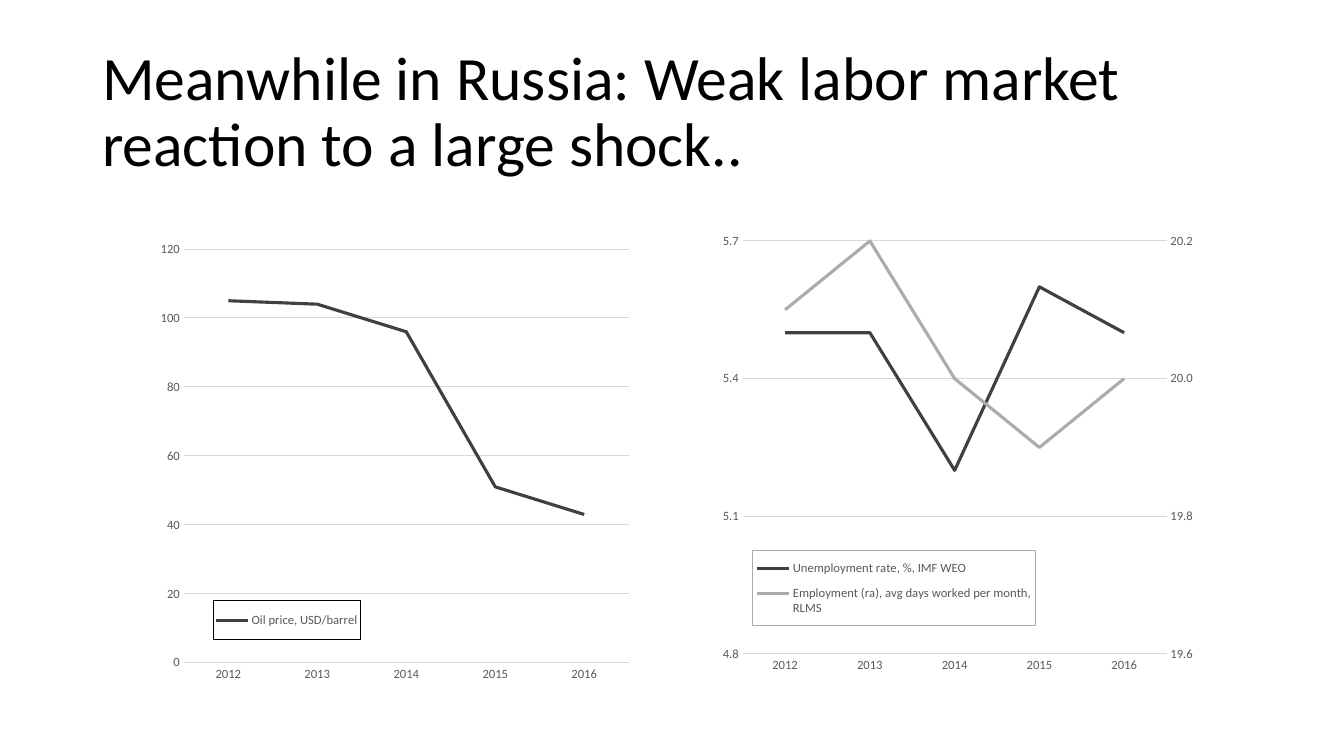
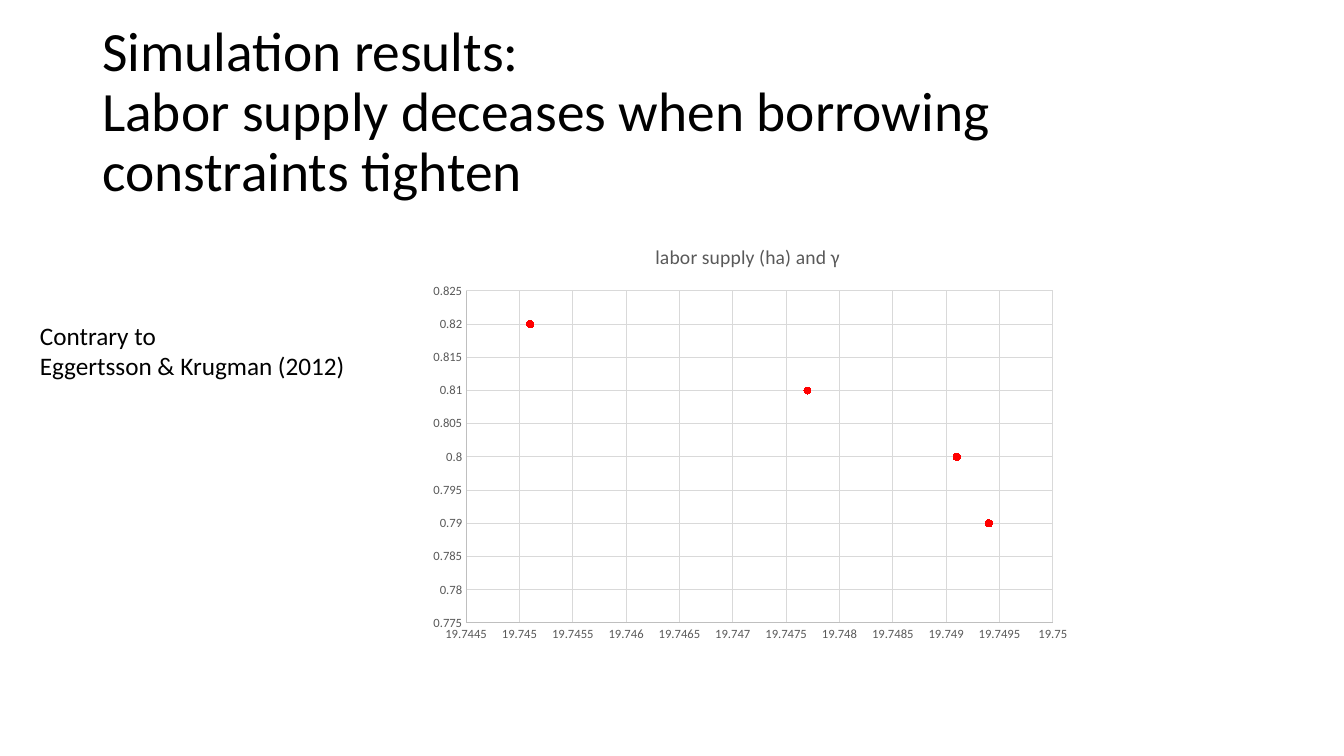
from copy import deepcopy

from pptx import Presentation
from pptx.chart.axis import CategoryAxis, ValueAxis
from pptx.chart.data import CategoryChartData, XyChartData
from pptx.dml.color import RGBColor
from pptx.enum.chart import XL_CHART_TYPE, XL_LEGEND_POSITION, XL_MARKER_STYLE, XL_TICK_MARK
from pptx.enum.text import MSO_ANCHOR, MSO_AUTO_SIZE, PP_ALIGN
from pptx.oxml import parse_xml
from pptx.oxml.ns import nsdecls, qn
from pptx.util import Emu, Pt

LINE_CHART = XL_CHART_TYPE.LINE
SCATTER_CHART = XL_CHART_TYPE.XY_SCATTER
LEGEND_BOTTOM = XL_LEGEND_POSITION.BOTTOM
CIRCLE = XL_MARKER_STYLE.CIRCLE
NO_TICK = XL_TICK_MARK.NONE
MIDDLE = MSO_ANCHOR.MIDDLE
FIXED_SIZE = MSO_AUTO_SIZE.NONE
GROW = MSO_AUTO_SIZE.SHAPE_TO_FIT_TEXT
LEFT = PP_ALIGN.LEFT

EMU_PER_PX = 914400 / 100.8
TITLE_ONLY = 5
YEARS = ["2012", "2013", "2014", "2015", "2016"]


def px(length):
    """Turn pixels into EMU."""
    return Emu(round(length * EMU_PER_PX))


def rgb(hex_colour):
    """Turn a hex string into a colour."""
    return RGBColor.from_string(hex_colour)


class Deck:
    """Hold the shared style and the current slide."""

    FONT = "Calibri"
    INK, LABEL, GRID, AXIS = "000000", "595959", "D9D9D9", "BFBFBF"
    DARK, PALE, DOT = "404040", "AFABAB", "FF0000"

    def __init__(self):
        """Start an empty wide presentation."""
        self.presentation = Presentation()
        self.presentation.slide_width = px(1344)
        self.presentation.slide_height = px(756)
        self.slide = None

    def style_font(self, font, size, colour):
        """Apply the deck typeface with a size and colour."""
        font.name, font.size, font.bold = self.FONT, Pt(size), False
        font.color.rgb = rgb(colour)

    def style_line(self, line, colour, width=0.75):
        """Colour a line, or hide it when no colour is given."""
        if colour is None:
            line.fill.background()
        else:
            line.color.rgb = rgb(colour)
            line.width = Pt(width)

    def add_slide(self, heading, size=44):
        """Add a slide with its title."""
        layout = self.presentation.slide_layouts[TITLE_ONLY]
        self.slide = self.presentation.slides.add_slide(layout)
        title = self.slide.shapes.title
        title.left, title.top, title.width, title.height = map(px, (92, 40, 1159, 147))
        frame = title.text_frame
        frame.text = heading
        frame.auto_size, frame.vertical_anchor = FIXED_SIZE, MIDDLE
        paragraph = frame.paragraphs[0]
        paragraph.alignment, paragraph.line_spacing = LEFT, 0.9
        self.style_font(paragraph.font, size, self.INK)

    def add_note(self, box, lines, size=18):
        """Add an unwrapped text box with one paragraph per line."""
        frame = self.slide.shapes.add_textbox(*map(px, box)).text_frame
        frame.word_wrap, frame.auto_size = False, GROW
        frame.text = "\n".join(lines)
        for paragraph in frame.paragraphs:
            self.style_font(paragraph.font, size, self.INK)

    def manual_layout(self, frame, area, inner=False):
        """Return chart layout XML for an area given in slide pixels."""
        left, top, width, height = frame
        shares = ((area[0] - left) / width, (area[1] - top) / height,
                  area[2] / width, area[3] / height)
        target = '<c:layoutTarget val="inner"/>' if inner else ""
        modes = "".join(f'<c:{side}Mode val="edge"/>' for side in "xy")
        values = "".join(f'<c:{key} val="{share:.3f}"/>' for key, share in zip("xywh", shares))
        return parse_xml(f'<c:layout {nsdecls("c")}><c:manualLayout>'
                         f'{target}{modes}{values}</c:manualLayout></c:layout>')

    def add_chart(self, kind, frame, plot, data):
        """Add a chart with a fixed plot area and the deck font."""
        chart = self.slide.shapes.add_chart(kind, *map(px, frame), data).chart
        self.style_font(chart.font, 10, self.INK)
        chart.has_title = chart.has_legend = False
        chart.plots[0].vary_by_categories = False
        plot_area = chart._chartSpace.chart.plotArea
        for layout in plot_area.findall(qn("c:layout")):
            plot_area.remove(layout)
        plot_area.insert(0, self.manual_layout(frame, plot, inner=True))
        return chart

    def style_axis(self, axis, line=None, grid=None, scale=None, number_format="General"):
        """Format an axis; scale is minimum, maximum and step."""
        axis.major_tick_mark = axis.minor_tick_mark = NO_TICK
        self.style_line(axis.format.line, line)
        axis.has_major_gridlines = grid is not None
        if grid:
            self.style_line(axis.major_gridlines.format.line, grid)
        if scale:
            axis.minimum_scale, axis.maximum_scale, axis.major_unit = scale
        labels = axis.tick_labels
        labels.number_format, labels.number_format_is_linked = number_format, False
        self.style_font(labels.font, 9, self.LABEL)

    def add_legend(self, chart, frame, box, outline):
        """Add an outlined legend over the plot."""
        chart.has_legend = True
        legend = chart.legend
        legend.position, legend.include_in_layout = LEGEND_BOTTOM, False
        overlay = legend._element.find(qn("c:overlay"))
        overlay.addprevious(self.manual_layout(frame, box))
        overlay.addnext(parse_xml(
            f'<c:spPr {nsdecls("c", "a")}><a:noFill/><a:ln w="9525"><a:solidFill>'
            f'<a:srgbClr val="{outline}"/></a:solidFill></a:ln></c:spPr>'))
        self.style_font(legend.font, 9, self.LABEL)

    def add_line_chart(self, frame, plot, series, scale, number_format, legend, outline):
        """Add a yearly line chart from name, values and colour triples."""
        data = CategoryChartData()
        data.categories = YEARS
        for name, values, _ in series:
            data.add_series(name, values)
        chart = self.add_chart(LINE_CHART, frame, plot, data)
        for line, (_, _, colour) in zip(chart.plots[0].series, series):
            line.smooth = False
            self.style_line(line.format.line, colour, 2.25)
        self.style_axis(chart.category_axis, line=self.GRID)
        self.style_axis(chart.value_axis, grid=self.GRID, scale=scale,
                        number_format=number_format)
        self.add_legend(chart, frame, legend, outline)
        return chart

    def move_last_series_right(self, chart, scale, number_format):
        """Plot the last series against a second axis on the right."""
        plot_area = chart._chartSpace.chart.plotArea
        left_plot = plot_area.find(qn("c:lineChart"))
        right_plot = deepcopy(left_plot)
        left_plot.remove(left_plot.findall(qn("c:ser"))[-1])
        for series in right_plot.findall(qn("c:ser"))[:-1]:
            right_plot.remove(series)
        left_plot.addnext(right_plot)

        years = deepcopy(plot_area.find(qn("c:catAx")))
        values = deepcopy(plot_area.find(qn("c:valAx")))
        plot_area.find(qn("c:valAx")).addnext(values)
        values.addnext(years)
        ids = ("50010", "50020")
        for axis, own, other in ((years, *ids), (values, *reversed(ids))):
            axis.find(qn("c:axId")).set("val", own)
            axis.find(qn("c:crossAx")).set("val", other)
        for reference, own in zip(right_plot.findall(qn("c:axId")), ids):
            reference.set("val", own)
        values.find(qn("c:axPos")).set("val", "r")
        values.find(qn("c:crosses")).set("val", "max")
        CategoryAxis(years).visible = False
        self.style_axis(ValueAxis(values), scale=scale, number_format=number_format)

    def add_scatter_chart(self, frame, plot, heading, points, x_scale, y_scale):
        """Add a titled scatter chart of dots."""
        data = XyChartData()
        dots = data.add_series("Series 1")
        for x, y in points:
            dots.add_data_point(x, y)
        chart = self.add_chart(SCATTER_CHART, frame, plot, data)
        for axis, scale in ((chart.category_axis, x_scale), (chart.value_axis, y_scale)):
            self.style_axis(axis, line=self.AXIS, grid=self.GRID, scale=scale)
        chart.has_title = True
        chart.chart_title.include_in_layout = False
        caption = chart.chart_title.text_frame
        caption.text = heading
        self.style_font(caption.paragraphs[0].font, 14, self.LABEL)
        series = chart.plots[0].series[0]
        self.style_line(series.format.line, None)
        marker = series.marker
        marker.style, marker.size = CIRCLE, 5
        marker.format.fill.solid()
        marker.format.fill.fore_color.rgb = rgb(self.DOT)
        self.style_line(marker.format.line, self.DOT)


def main():
    """Build both slides and save them."""
    deck = Deck()

    deck.add_slide("Meanwhile in Russia: Weak labor market reaction to a large shock..")
    labor = deck.add_line_chart(
        frame=(706, 216, 504, 500), plot=(743, 241, 424, 413),
        series=[
            ("Unemployment rate, %, IMF WEO", (5.5, 5.5, 5.2, 5.6, 5.5), deck.DARK),
            ("Employment (ra), avg days worked per month, RLMS",
             (20.1, 20.2, 20, 19.9, 20), deck.PALE),
        ],
        scale=(4.8, 5.7, 0.3), number_format="0.0",
        legend=(753, 551, 282, 75), outline=deck.PALE)
    deck.move_last_series_right(labor, scale=(19.6, 20.2, 0.2), number_format="0.0")
    deck.add_line_chart(
        frame=(142, 224, 504, 492), plot=(184, 249, 445, 414),
        series=[("Oil price, USD/barrel", (105, 104, 96, 51, 43), deck.DARK)],
        scale=(0, 120, 20), number_format="General",
        legend=(213, 601, 147, 39), outline=deck.INK)

    deck.add_slide("Simulation results:\vLabor supply deceases when borrowing "
                   "constraints tighten", size=39.6)
    deck.add_scatter_chart(
        frame=(420, 226, 660, 422), plot=(466, 291, 587, 332),
        heading="labor supply (ha) and γ ",
        points=[(19.7451, 0.82), (19.7477, 0.81), (19.7491, 0.8), (19.7494, 0.79)],
        x_scale=(19.7445, 19.75, 0.0005), y_scale=(0.775, 0.825, 0.005))
    deck.add_note((30, 315, 329, 71), ["Contrary to", "Eggertsson & Krugman (2012)"])

    deck.presentation.save("out.pptx")


if __name__ == "__main__":
    main()
